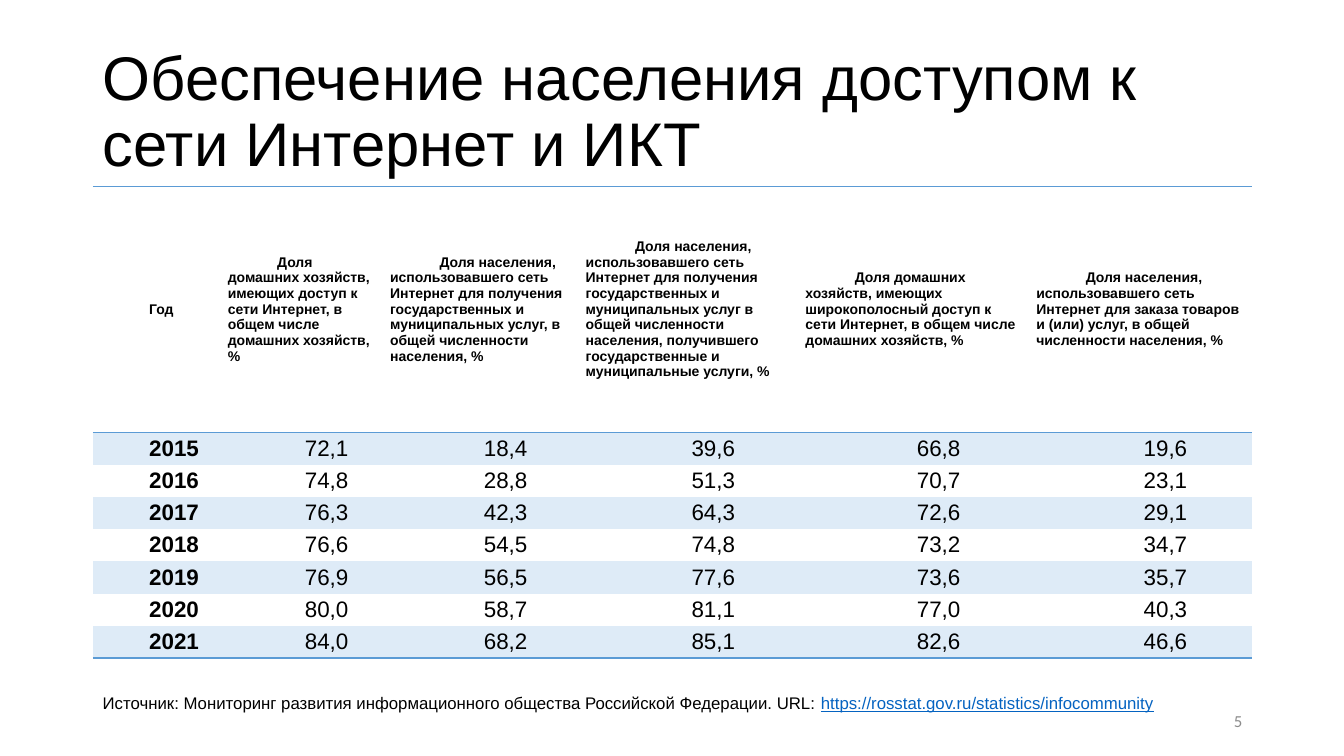
from lxml.etree import SubElement
from pptx import Presentation
from pptx.dml.color import RGBColor as RGB
from pptx.enum.text import MSO_ANCHOR as ANCHOR, MSO_AUTO_SIZE as FIT, PP_ALIGN as ALIGN
from pptx.oxml import parse_xml
from pptx.oxml.ns import nsdecls, qn
from pptx.util import Inches, Pt

HUES = {
    "text": "000000",
    "rule": "5B9BD5",
    "band": "DEEBF7",
    "link": "0563C1",
    "page": "8C8C8C",
}
NO_STYLE = "{2D5ABB26-0587-4C30-8999-92F81FD0307C}"
HEADS = [
    "Год",
    "Доля домашних хозяйств, имеющих доступ к сети Интернет, в общем числе домашних хозяйств, %",
    "Доля населения, использовавшего сеть Интернет для получения государственных "
    "и муниципальных услуг, в общей численности населения, %",
    "Доля населения, использовавшего сеть Интернет для получения государственных "
    "и муниципальных услуг в общей численности населения, получившего "
    "государственные и муниципальные услуги, %",
    "Доля домашних хозяйств, имеющих широкополосный доступ к сети Интернет, "
    "в общем числе домашних хозяйств, %",
    "Доля населения, использовавшего сеть Интернет для заказа товаров и (или) услуг, "
    "в общей численности населения, %",
]
ROWS = [
    HEADS,
    ["2015", "72,1", "18,4", "39,6", "66,8", "19,6"],
    ["2016", "74,8", "28,8", "51,3", "70,7", "23,1"],
    ["2017", "76,3", "42,3", "64,3", "72,6", "29,1"],
    ["2018", "76,6", "54,5", "74,8", "73,2", "34,7"],
    ["2019", "76,9", "56,5", "77,6", "73,6", "35,7"],
    ["2020", "80,0", "58,7", "81,1", "77,0", "40,3"],
    ["2021", "84,0", "68,2", "85,1", "82,6", "46,6"],
]
WIDTHS = [1.27, 1.61, 1.94, 2.18, 2.29, 2.21]
HEAD_H, ROW_H = 2.44, 0.32
LEFT, WIDE = 0.92, 11.5


def style(run, size, hue="text", face="Arial", bold=False):
    run.font.size = Pt(size)
    run.font.name = face
    run.font.bold = bold
    run.font.color.rgb = RGB.from_string(HUES[hue])


def rule(cell, tag):
    """Draw a thin line on one side of a cell: a:lnT or a:lnB."""
    line = parse_xml(f'<{tag} {nsdecls("a")} w="12700"/>')
    fill = SubElement(line, qn("a:solidFill"))
    SubElement(fill, qn("a:srgbClr"), val=HUES["rule"])
    cell._tc.get_or_add_tcPr().insert(0, line)


deck = Presentation()
deck.slide_width, deck.slide_height = Inches(13.33), Inches(7.5)
slide = deck.slides.add_slide(deck.slide_layouts[5])
shapes = slide.shapes

# Title
title = shapes.title
title.left, title.top = Inches(LEFT), Inches(0.4)
title.width, title.height = Inches(WIDE), Inches(1.45)
frame = title.text_frame
frame.text = "Обеспечение населения доступом к сети Интернет и ИКТ"
frame.auto_size = FIT.NONE
frame.vertical_anchor = ANCHOR.MIDDLE
para = frame.paragraphs[0]
para.alignment = ALIGN.LEFT
para.line_spacing = 0.9
style(para.runs[0], 44)

# Table
last = len(ROWS) - 1
table = shapes.add_table(
    len(ROWS), len(WIDTHS), Inches(LEFT), Inches(1.85),
    Inches(WIDE), Inches(HEAD_H + last * ROW_H),
).table
table._tbl.tblPr.find(qn("a:tableStyleId")).text = NO_STYLE
table.horz_banding = False
for col, width in zip(table.columns, WIDTHS):
    col.width = Inches(width)

for r, row in enumerate(ROWS):
    table.rows[r].height = Inches(ROW_H if r else HEAD_H)
    for c, text in enumerate(row):
        cell = table.cell(r, c)
        cell.margin_left = cell.margin_right = Inches(0.07)
        cell.margin_top = cell.margin_bottom = 0
        cell.vertical_anchor = ANCHOR.MIDDLE
        cell.text_frame.text = text
        para = cell.text_frame.paragraphs[0]
        para.alignment = ALIGN.CENTER if r and c else ALIGN.LEFT
        para._p.get_or_add_pPr().set("indent", str(Inches(0.49)))
        style(para.runs[0], 16 if r else 10, bold=not (r and c))
        if r % 2:
            cell.fill.solid()
            cell.fill.fore_color.rgb = RGB.from_string(HUES["band"])
        else:
            cell.fill.background()
        if r in (0, last):
            rule(cell, "a:lnB")
        if r == 0:
            rule(cell, "a:lnT")

# Page number
page = shapes.add_textbox(Inches(9.42), Inches(6.95), Inches(3), Inches(0.4))
frame = page.text_frame
frame.word_wrap = True
frame.vertical_anchor = ANCHOR.MIDDLE
frame.text = "5"
para = frame.paragraphs[0]
para.alignment = ALIGN.RIGHT
style(para.runs[0], 12, "page", "Calibri")

# Source line
source = shapes.add_textbox(Inches(LEFT), Inches(6.82), Inches(11.16), Inches(0.5))
frame = source.text_frame
frame.word_wrap = True
frame.text = "Источник: Мониторинг развития информационного общества Российской Федерации. URL: "
para = frame.paragraphs[0]
style(para.runs[0], 12)
link = para.add_run()
link.text = "https://rosstat.gov.ru/statistics/infocommunity"
style(link, 12, "link")
link.font.underline = True

deck.save("out.pptx")
